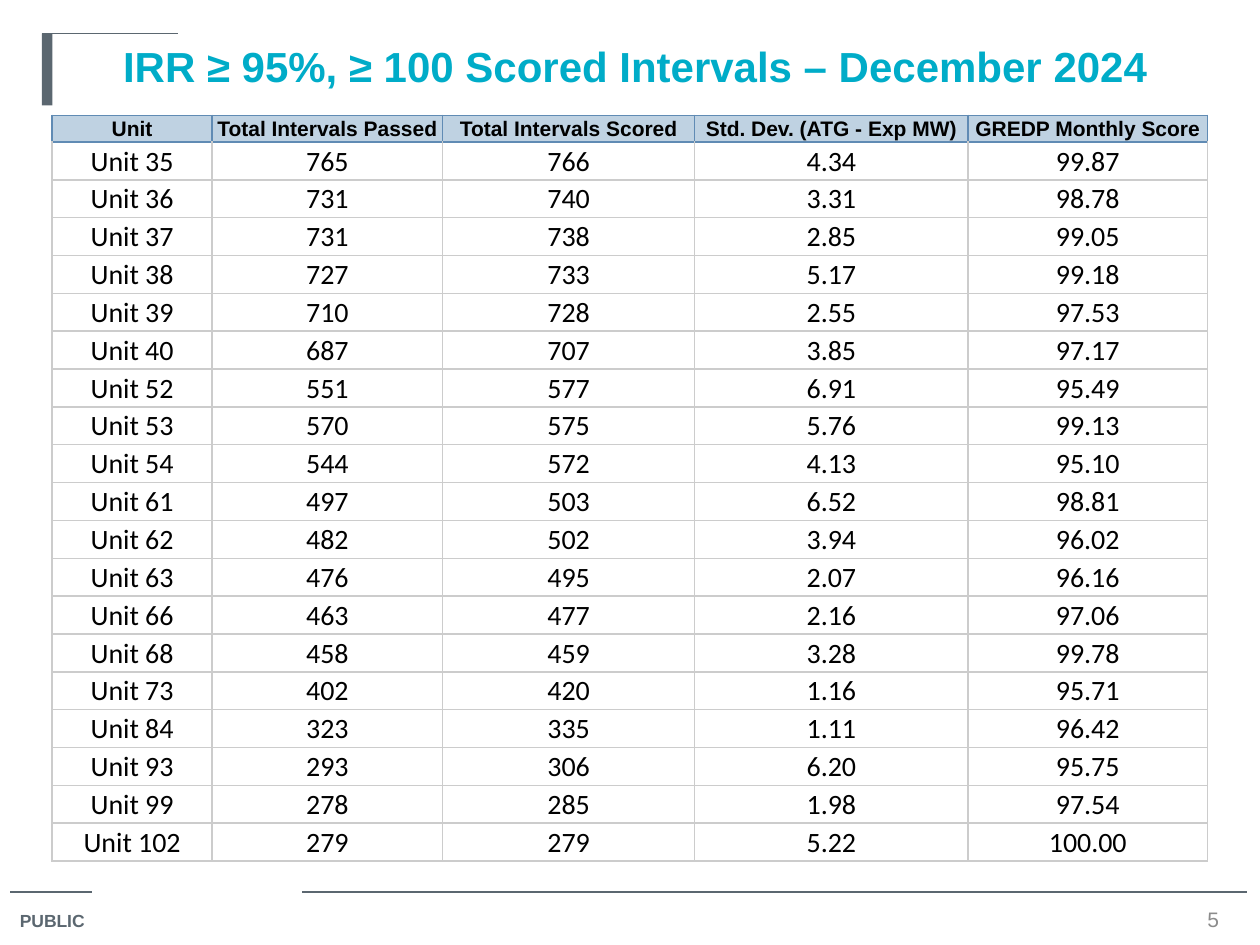
from dataclasses import dataclass

from lxml.etree import SubElement
from pptx import Presentation
from pptx.dml.color import RGBColor as Color
from pptx.enum.shapes import MSO_CONNECTOR as Connector, MSO_SHAPE as Shape
from pptx.enum.text import MSO_ANCHOR as Anchor, PP_ALIGN as Align
from pptx.oxml.ns import qn
from pptx.util import Pt


@dataclass(frozen=True)
class Theme:
    slate: str = "5B6770"
    teal: str = "00ACC8"
    grey: str = "8C8C8C"
    black: str = "000000"
    header_fill: str = "BFD2E2"
    header_border: str = "608BB4"
    body_border: str = "CCCCCC"
    heading_font: str = "Arial"
    body_font: str = "Calibri"
    title_size: float = 24
    body_size: float = 16
    small_size: float = 12
    footer_size: float = 10
    rule_width: float = 0.75


THEME = Theme()
TITLE = "IRR ≥ 95%, ≥ 100 Scored Intervals – December 2024"
HEADERS = ("Unit", "Total Intervals Passed", "Total Intervals Scored",
           "Std. Dev. (ATG - Exp MW)", "GREDP Monthly Score")
COLUMN_WIDTHS = (91.5, 131.75, 144, 156.25, 136.75)
HEADER_HEIGHT = 14.5
ROW_HEIGHT = 21.65
UNITS = (
    (35, 765, 766, 4.34, 99.87),
    (36, 731, 740, 3.31, 98.78),
    (37, 731, 738, 2.85, 99.05),
    (38, 727, 733, 5.17, 99.18),
    (39, 710, 728, 2.55, 97.53),
    (40, 687, 707, 3.85, 97.17),
    (52, 551, 577, 6.91, 95.49),
    (53, 570, 575, 5.76, 99.13),
    (54, 544, 572, 4.13, 95.10),
    (61, 497, 503, 6.52, 98.81),
    (62, 482, 502, 3.94, 96.02),
    (63, 476, 495, 2.07, 96.16),
    (66, 463, 477, 2.16, 97.06),
    (68, 458, 459, 3.28, 99.78),
    (73, 402, 420, 1.16, 95.71),
    (84, 323, 335, 1.11, 96.42),
    (93, 293, 306, 6.20, 95.75),
    (99, 278, 285, 1.98, 97.54),
    (102, 279, 279, 5.22, 100.00),
)


def write(frame, text, size, color, font=THEME.heading_font, bold=False, align=Align.CENTER):
    para = frame.paragraphs[0]
    para.text = text
    para.alignment = align
    para.font.name = font
    para.font.size = Pt(size)
    para.font.bold = bold
    para.font.color.rgb = Color.from_string(color)


def add_rule(page, left, right, y):
    rule = page.shapes.add_connector(Connector.STRAIGHT, Pt(left), Pt(y), Pt(right), Pt(y))
    rule.line.color.rgb = Color.from_string(THEME.slate)
    rule.line.width = Pt(THEME.rule_width)
    SubElement(rule._element.spPr, qn("a:effectLst"))


def add_accent_bar(page):
    bar = page.shapes.add_shape(Shape.RECTANGLE, Pt(24), Pt(19.25), Pt(6), Pt(41))
    bar.shadow.inherit = False
    bar.fill.solid()
    bar.fill.fore_color.rgb = Color.from_string(THEME.slate)
    bar.line.fill.background()


def add_label(page, text, left, top, width, height, anchor=Anchor.TOP, **style):
    box = page.shapes.add_textbox(Pt(left), Pt(top), Pt(width), Pt(height))
    box.text_frame.word_wrap = True
    box.text_frame.vertical_anchor = anchor
    write(box.text_frame, text, **style)


def set_title(page):
    title = page.shapes.title
    title.left, title.top, title.width, title.height = Pt(30), Pt(19.5), Pt(666), Pt(56)
    title.text_frame.vertical_anchor = Anchor.TOP
    write(title.text_frame, TITLE, THEME.title_size, THEME.teal, bold=True)


def set_borders(cell, color, top_color):
    properties = cell._tc.get_or_add_tcPr()
    for index, side in enumerate(("lnL", "lnR", "lnT", "lnB")):
        line = properties.makeelement(qn(f"a:{side}"), {"w": str(Pt(1))})
        fill = SubElement(line, qn("a:solidFill"))
        SubElement(fill, qn("a:srgbClr"), val=top_color if side == "lnT" else color)
        properties.insert(index, line)


def format_cell(cell, text, border, top_border, **style):
    cell.margin_left = cell.margin_right = cell.margin_top = Pt(0.7)
    cell.margin_bottom = Pt(0)
    cell.vertical_anchor = Anchor.MIDDLE
    write(cell.text_frame, text, color=THEME.black, **style)
    set_borders(cell, border, top_border)


def add_score_table(page):
    row_heights = [HEADER_HEIGHT] + [ROW_HEIGHT] * len(UNITS)
    table = page.shapes.add_table(
        len(row_heights), len(HEADERS), Pt(29.75), Pt(66),
        Pt(sum(COLUMN_WIDTHS)), Pt(sum(row_heights))).table
    table.horz_banding = False
    for column, width in zip(table.columns, COLUMN_WIDTHS):
        column.width = Pt(width)
    for row, height in zip(table.rows, row_heights):
        row.height = Pt(height)

    for column, header in enumerate(HEADERS):
        cell = table.cell(0, column)
        cell.fill.solid()
        cell.fill.fore_color.rgb = Color.from_string(THEME.header_fill)
        format_cell(cell, header, THEME.header_border, THEME.header_border,
                    size=THEME.small_size, bold=True)

    for row, (unit, passed, scored, deviation, score) in enumerate(UNITS, start=1):
        top_border = THEME.header_border if row == 1 else THEME.body_border
        texts = (f"Unit {unit}", str(passed), str(scored), f"{deviation:.2f}", f"{score:.2f}")
        for column, text in enumerate(texts):
            cell = table.cell(row, column)
            cell.fill.background()
            format_cell(cell, text, THEME.body_border, top_border,
                        size=THEME.body_size, font=THEME.body_font)


def main():
    deck = Presentation()
    deck.slide_width, deck.slide_height = Pt(720), Pt(540)
    page = deck.slides.add_slide(deck.slide_layouts[5])
    add_rule(page, 5.75, 52.5, 509.75)
    add_rule(page, 172.8, 712.8, 509.75)
    add_label(page, "PUBLIC", 4.25, 516.25, 55.5, 20, size=THEME.footer_size,
              color=THEME.slate, bold=True, align=Align.LEFT)
    add_accent_bar(page)
    add_rule(page, 24, 102, 19.25)
    add_label(page, "5", 678.25, 517, 30, 16.5, anchor=Anchor.MIDDLE,
              size=THEME.small_size, color=THEME.grey)
    set_title(page)
    add_score_table(page)
    deck.save("out.pptx")


if __name__ == "__main__":
    main()
